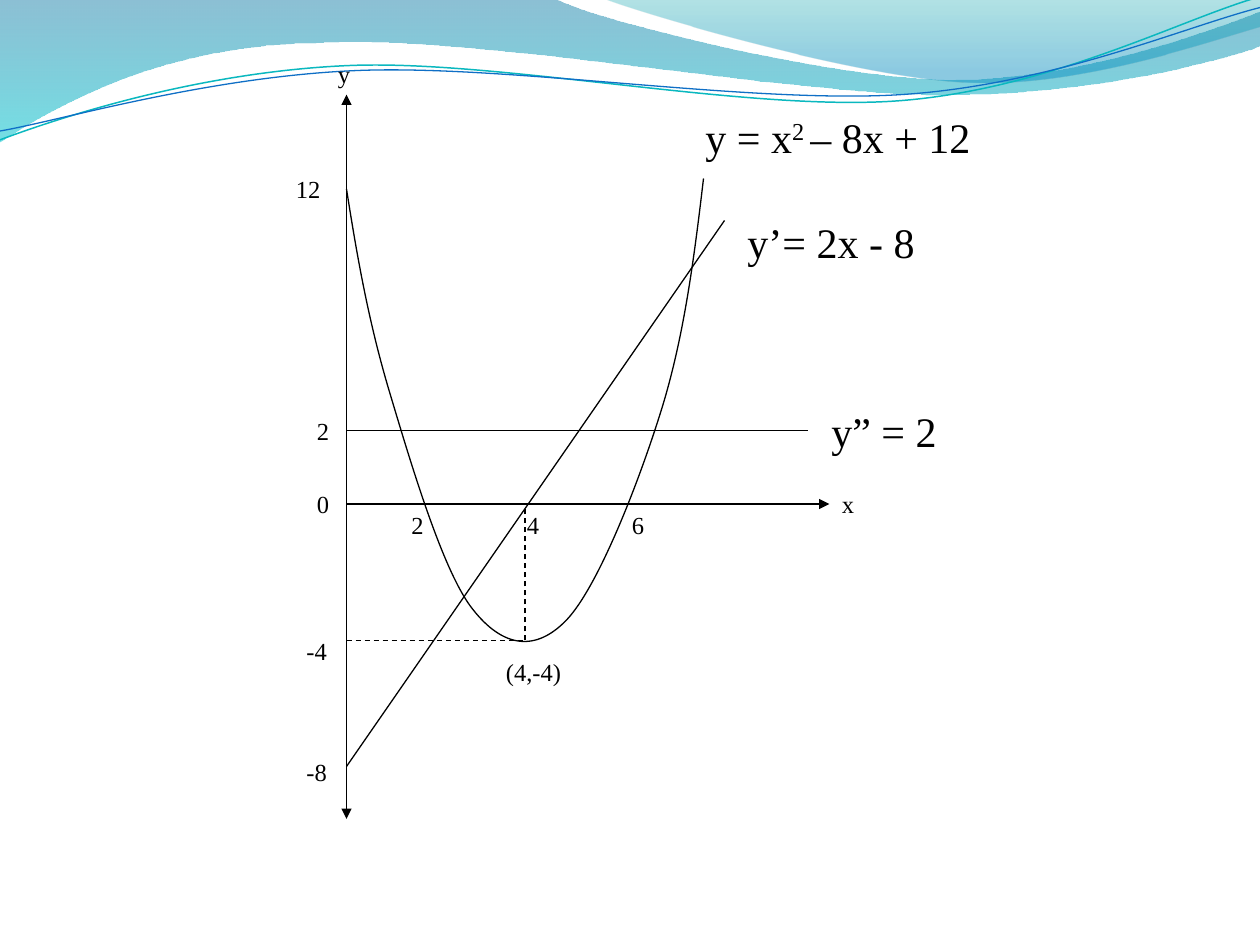
from math import cos, radians, sin
from typing import NamedTuple

from lxml.etree import SubElement
from pptx import Presentation
from pptx.dml.color import RGBColor
from pptx.enum.dml import MSO_LINE
from pptx.enum.shapes import MSO_CONNECTOR
from pptx.enum.text import MSO_AUTO_SIZE
from pptx.oxml.ns import qn
from pptx.util import Pt

PX = 3048  # EMU; 300 px to the inch
FONT = "Times New Roman"

BLACK = RGBColor(0x00, 0x00, 0x00)
DEEP_BLUE = RGBColor(0x00, 0x74, 0xA1)
CYAN = RGBColor(0x00, 0xC6, 0xCF)
TEAL = RGBColor(0x00, 0xA1, 0xA9)
SKY_BLUE = RGBColor(0x00, 0x8B, 0xBF)
TURQUOISE = RGBColor(0x0A, 0xB8, 0xBF)
BLUE = RGBColor(0x0F, 0x6F, 0xC6)


class Stop(NamedTuple):
    position: float
    color: RGBColor
    opacity: int


class Band(NamedTuple):
    outline: list[tuple]
    stops: list[Stop]


class Curve(NamedTuple):
    outline: list[tuple]
    color: RGBColor = BLACK
    width: float = 0.75
    rotation: float = 0


class Line(NamedTuple):
    start: tuple[int, int]
    end: tuple[int, int]
    arrows: tuple[str, ...] = ()
    dashed: bool = False


class Label(NamedTuple):
    left: int
    top: int
    width: int
    runs: tuple[str, ...]
    height: int = 100
    size: int = 14


# In an outline a pair is a straight step; six numbers are a cubic curve.
BANDS = [
    Band([(0, -3), (1320, -3), (1428, 51, 1992, 189, 2274, 189),
          (2559, 189, 2874, 78, 3000, 27), (3003, 108),
          (2949, 132, 2610, 228, 2238, 225), (1866, 225, 1146, 84, 771, 102),
          (387, 105, 138, 249, -3, 339)],
         [Stop(0, DEEP_BLUE, 45), Stop(1, CYAN, 55)]),
    Band([(1437, -3), (1527, 33, 2046, 186, 2307, 195),
          (2568, 207, 2883, 96, 3000, 63), (3000, 0)],
         [Stop(0, TEAL, 30), Stop(0.8, SKY_BLUE, 45)]),
]

WAVE_TILT = -2.7
WAVE_CENTER = (1497, 174)
WAVES = [
    Curve([(0, 333), (144, 279, 474, 171, 831, 156),
           (1185, 141, 1779, 267, 2139, 240), (2499, 213, 2814, 45, 2994, -6)],
          TURQUOISE, 0.85, WAVE_TILT),
    Curve([(0, 312), (141, 288, 492, 183, 849, 168),
           (1209, 153, 1791, 249, 2151, 225), (2508, 201, 2823, 63, 3000, 18)],
          BLUE, 0.75, WAVE_TILT),
]

PARABOLA = Curve([(825, 450), (849, 603, 876, 759, 925, 925),
                  (975, 1092, 1053, 1359, 1125, 1450),
                  (1197, 1542, 1275, 1554, 1350, 1475),
                  (1425, 1395, 1521, 1149, 1575, 975),
                  (1629, 801, 1653, 612, 1675, 425)])

AXIS_X, AXIS_Y = 825, 1200
VERTEX = (1250, 1525)
LINES = [
    Line((AXIS_X, AXIS_Y), (1975, AXIS_Y), ("tailEnd",)),
    Line((AXIS_X, 225), (AXIS_X, 1950), ("headEnd", "tailEnd")),
    Line((AXIS_X, 1825), (1725, 525)),
    Line((AXIS_X, 1025), (1925, 1025)),
    Line(VERTEX, (VERTEX[0], AXIS_Y), dashed=True),
    Line((AXIS_X, VERTEX[1]), VERTEX, dashed=True),
]

LABELS = [
    Label(1225, 1200, 75, ("4",)),
    Label(950, 1200, 75, ("2",)),
    Label(1475, 1200, 75, ("6",)),
    Label(700, 1500, 125, ("-4",)),
    Label(700, 1788, 125, ("-8",)),
    Label(725, 975, 100, ("2",)),
    Label(675, 400, 125, ("12",)),
    Label(1175, 1550, 200, ("(4,-4)",)),
    Label(1950, 950, 325, ("y” = 2",), 150, 24),
    Label(1975, 1150, 75, ("x",)),
    Label(775, 125, 75, ("y",)),
    Label(1750, 500, 525, ("y’= 2x - 8",), 150, 24),
    Label(1650, 250, 750, ("y = x", "2 ", "– 8x + 12"), 150, 24),
    Label(725, 1150, 100, ("0",)),
]


def turn(step: tuple, angle: float) -> tuple:
    """Turn the points of an outline step about the centre of the waves."""
    cosine, sine = cos(radians(angle)), sin(radians(angle))
    center_x, center_y = WAVE_CENTER
    turned = []
    for x, y in zip(step[::2], step[1::2]):
        x, y = x - center_x, y - center_y
        turned += [center_x + x * cosine - y * sine, center_y + x * sine + y * cosine]
    return tuple(turned)


def add_outline(shapes, outline: list[tuple], close: bool):
    """Build a freeform through all points, then join triples into cubic curves."""
    points = [(x * PX, y * PX) for step in outline for x, y in zip(step[::2], step[1::2])]
    builder = shapes.build_freeform(*points[0], scale=1.0)
    builder.add_line_segments(points[1:], close=close)
    shape = builder.convert_to_shape()
    shape.shadow.inherit = False
    segments = iter(list(shape._element.spPr.iter(qn("a:lnTo"))))
    for step in outline[1:]:
        first = next(segments)
        if len(step) == 6:
            first.tag = qn("a:cubicBezTo")
            for _ in range(2):
                control = next(segments)
                first.append(control[0])
                control.getparent().remove(control)
    return shape


def add_band(shapes, band: Band) -> None:
    shape = add_outline(shapes, band.outline, close=True)
    shape.line.fill.background()
    shape.fill.gradient()
    shape.fill.gradient_angle = 270
    for gradient_stop, stop in zip(shape.fill.gradient_stops, band.stops):
        gradient_stop.position = stop.position
        gradient_stop.color.rgb = stop.color
    colors = list(shape._element.spPr.iter(qn("a:srgbClr")))
    for color, stop in zip(colors, band.stops):
        SubElement(color, qn("a:alpha")).set("val", str(stop.opacity * 1000))


def add_curve(shapes, curve: Curve) -> None:
    outline = [turn(step, -curve.rotation) for step in curve.outline]
    shape = add_outline(shapes, outline, close=False)
    shape.rotation = curve.rotation
    shape.fill.background()
    shape.line.color.rgb = curve.color
    shape.line.width = Pt(curve.width)


def add_line(shapes, line: Line) -> None:
    ends = [value * PX for value in line.start + line.end]
    connector = shapes.add_connector(MSO_CONNECTOR.STRAIGHT, *ends)
    connector.line.color.rgb = BLACK
    connector.line.width = Pt(0.75)
    if line.dashed:
        connector.line.dash_style = MSO_LINE.DASH
    properties = connector._element.spPr
    for arrow in line.arrows:
        SubElement(properties.find(qn("a:ln")), qn(f"a:{arrow}")).set("type", "triangle")
    SubElement(properties, qn("a:effectLst"))


def add_label(shapes, label: Label) -> None:
    """Add a text box; the second run, if any, is an exponent."""
    box = [value * PX for value in (label.left, label.top, label.width, label.height)]
    frame = shapes.add_textbox(*box).text_frame
    frame.word_wrap = True
    frame.auto_size = MSO_AUTO_SIZE.SHAPE_TO_FIT_TEXT
    paragraph = frame.paragraphs[0]
    paragraph.font.name = FONT
    paragraph.font.size = Pt(label.size)
    paragraph.font.color.rgb = BLACK
    for index, text in enumerate(label.runs):
        run = paragraph.add_run()
        run.text = text
        if index == 1:
            run._r.get_or_add_rPr().set("baseline", "30000")


def main() -> None:
    presentation = Presentation()
    presentation.slide_width = 3000 * PX
    presentation.slide_height = 2250 * PX
    shapes = presentation.slides.add_slide(presentation.slide_layouts[6]).shapes
    for band in BANDS:
        add_band(shapes, band)
    waves = shapes.add_group_shape()
    for wave in WAVES:
        add_curve(waves.shapes, wave)
    add_curve(shapes, PARABOLA)
    for line in LINES:
        add_line(shapes, line)
    for label in LABELS:
        add_label(shapes, label)
    presentation.save("out.pptx")


if __name__ == "__main__":
    main()
